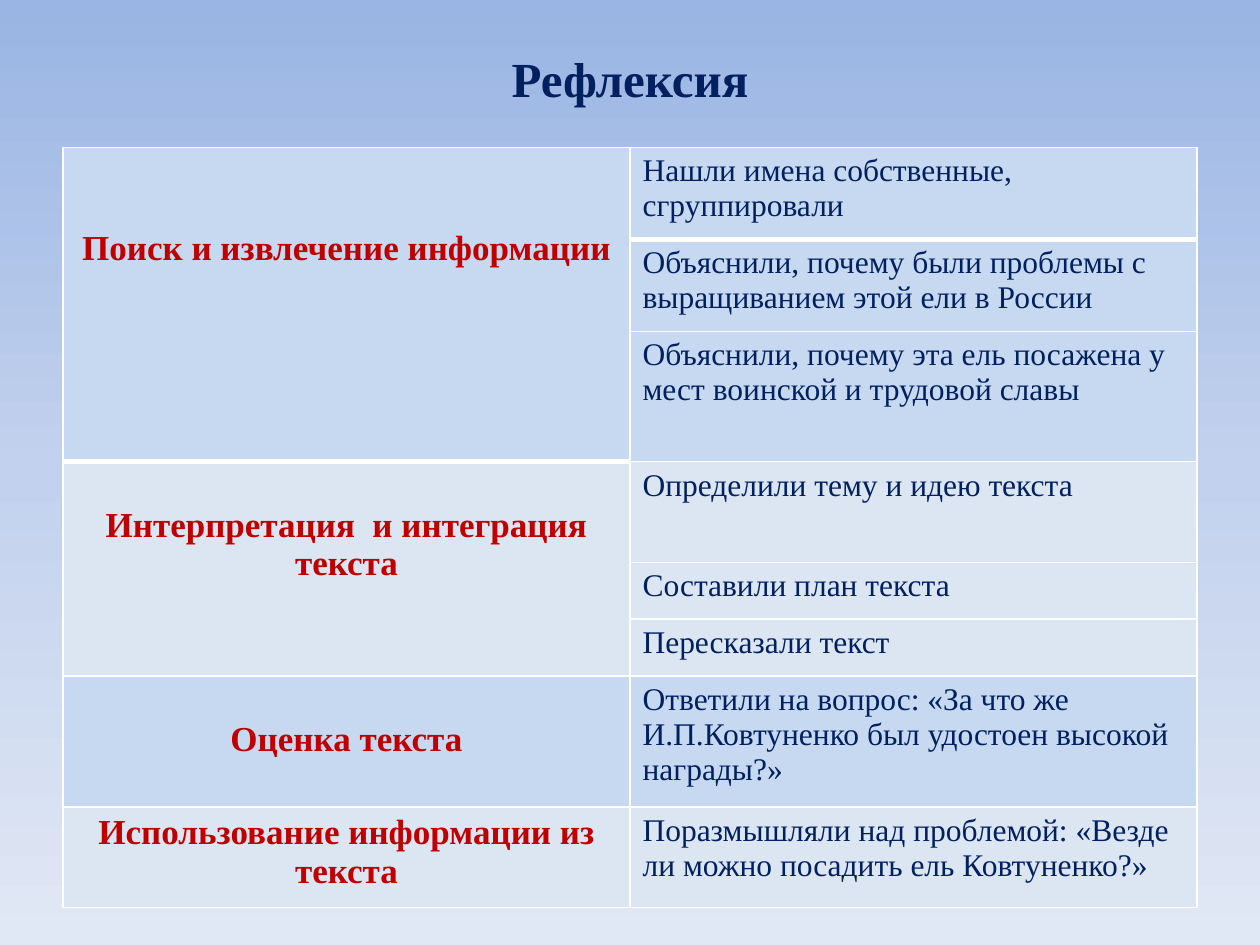
from lxml.etree import SubElement
from pptx import Presentation
from pptx.dml.color import RGBColor
from pptx.enum.text import MSO_ANCHOR, PP_ALIGN
from pptx.oxml.ns import qn
from pptx.util import Inches, Pt

CENTER, LEFT = PP_ALIGN.CENTER, PP_ALIGN.LEFT
MIDDLE = MSO_ANCHOR.MIDDLE
WIDTH, HEIGHT = Inches(10), Inches(7.5)
FONT = "Times New Roman"
COLORS = {"navy": "002060", "red": "C00000", "blue": "C6D9F1",
          "pale": "DCE6F2", "white": "FFFFFF"}
SKY = [(0, "9AB5E4"), (50, "C2D1ED"), (100, "E1E8F5")]
STYLES = {
    "title": {"size": Pt(28), "bold": True, "color": "navy", "align": CENTER},
    "skill": {"size": Pt(20), "bold": True, "color": "red", "align": CENTER},
    "task": {"size": Pt(18), "bold": False, "color": "navy", "align": LEFT},
}
LINE = 0.3  # height of one line of a skill name, inches

# skill, lines left free above it, tasks with their row heights in inches
GROUPS = [
    ("Поиск и извлечение информации", 2, [
        ("Нашли имена собственные, сгруппировали", 0.73),
        ("Объяснили, почему были проблемы с выращиванием этой ели в России", 0.73),
        ("Объяснили, почему эта ель посажена у мест воинской и трудовой славы", 1.02)]),
    ("Интерпретация  и интеграция текста", 1, [
        ("Определили тему и идею текста", 0.8),
        ("Составили план текста", 0.45),
        ("Пересказали текст", 0.45)]),
    ("Оценка текста", 1, [
        ("Ответили на вопрос: «За что же И.П.Ковтуненко был удостоен "
         "высокой награды?»", 1.04)]),
    ("Использование информации из текста", 0, [
        ("Поразмышляли над проблемой: «Везде ли можно посадить ель "
         "Ковтуненко?»", 0.8)]),
]


class Deck:
    def __init__(self):
        self.prs = Presentation()
        self.prs.slide_width, self.prs.slide_height = WIDTH, HEIGHT
        self.slide = self.prs.slides.add_slide(self.prs.slide_layouts[6])

    def sky(self, stops):
        """Fill the background with a gradient from top to bottom."""
        fill = self.slide.background.fill
        fill.gradient()
        fill.gradient_angle = 270
        ramp = self.slide.element.find(".//" + qn("a:gsLst"))
        for old in list(ramp):
            ramp.remove(old)
        for share, color in stops:
            stop = SubElement(ramp, qn("a:gs"), pos=str(share * 1000))
            SubElement(stop, qn("a:srgbClr"), val=color)

    def label(self, frame, text, style):
        look = STYLES[style]
        frame.word_wrap = True
        par = frame.paragraphs[0]
        par.alignment = look["align"]
        run = par.add_run()
        run.text = text
        values = {"name": FONT, "size": look["size"], "bold": look["bold"]}
        for key, value in values.items():
            setattr(run.font, key, value)
        run.font.color.rgb = RGBColor.from_string(COLORS[look["color"]])

    def title(self, text, x, y, w, h):
        box = self.slide.shapes.add_textbox(
            int(x * WIDTH), int(y * HEIGHT), int(w * WIDTH), int(h * HEIGHT))
        box.text_frame.vertical_anchor = MIDDLE
        self.label(box.text_frame, text, "title")

    def cell(self, cell, text, style, fill, edges, gap=0):
        """Fill one cell; edges maps a border's tag to its width in points."""
        self.label(cell.text_frame, text, style)
        cell.margin_top = Inches(0.05 + gap * LINE)
        props = cell._tc.get_or_add_tcPr()
        for tag, width in edges.items():
            line = SubElement(props, qn("a:" + tag), w=str(Pt(width)))
            paint = SubElement(line, qn("a:solidFill"))
            SubElement(paint, qn("a:srgbClr"), val=COLORS["white"])
        cell.fill.solid()
        cell.fill.fore_color.rgb = RGBColor.from_string(COLORS[fill])

    def table(self, groups, x, y, w):
        tasks = [task for group in groups for task in group[2]]
        total = Inches(sum(height for _, height in tasks))
        table = self.slide.shapes.add_table(
            len(tasks), 2, int(x * WIDTH), int(y * HEIGHT),
            int(w * WIDTH), total).table
        table.first_row = table.horz_banding = False
        for row, (_, height) in zip(table.rows, tasks):
            row.height = Inches(height)
        top = 0
        for index, (skill, gap, items) in enumerate(groups):
            fill = ("blue", "pale")[index % 2]
            head = table.cell(top, 0)
            if len(items) > 1:
                head.merge(table.cell(top + len(items) - 1, 0))
            sides = {"lnL": 1, "lnR": 1}
            first = {**sides, "lnT": 1, "lnB": 3} if top == 0 else {**sides, "lnB": 1}
            self.cell(head, skill, "skill", fill, first, gap)
            for step, (task, _) in enumerate(items):
                edges = first if step == 0 else {**sides, "lnB": 1}
                self.cell(table.cell(top + step, 1), task, "task", fill, edges)
            top += len(items)


def main():
    deck = Deck()
    deck.sky(SKY)
    deck.title("Рефлексия", 0.05, 0.04, 0.9, 0.085)
    deck.table(GROUPS, 0.05, 0.156, 0.9)
    deck.prs.save("out.pptx")


if __name__ == "__main__":
    main()
